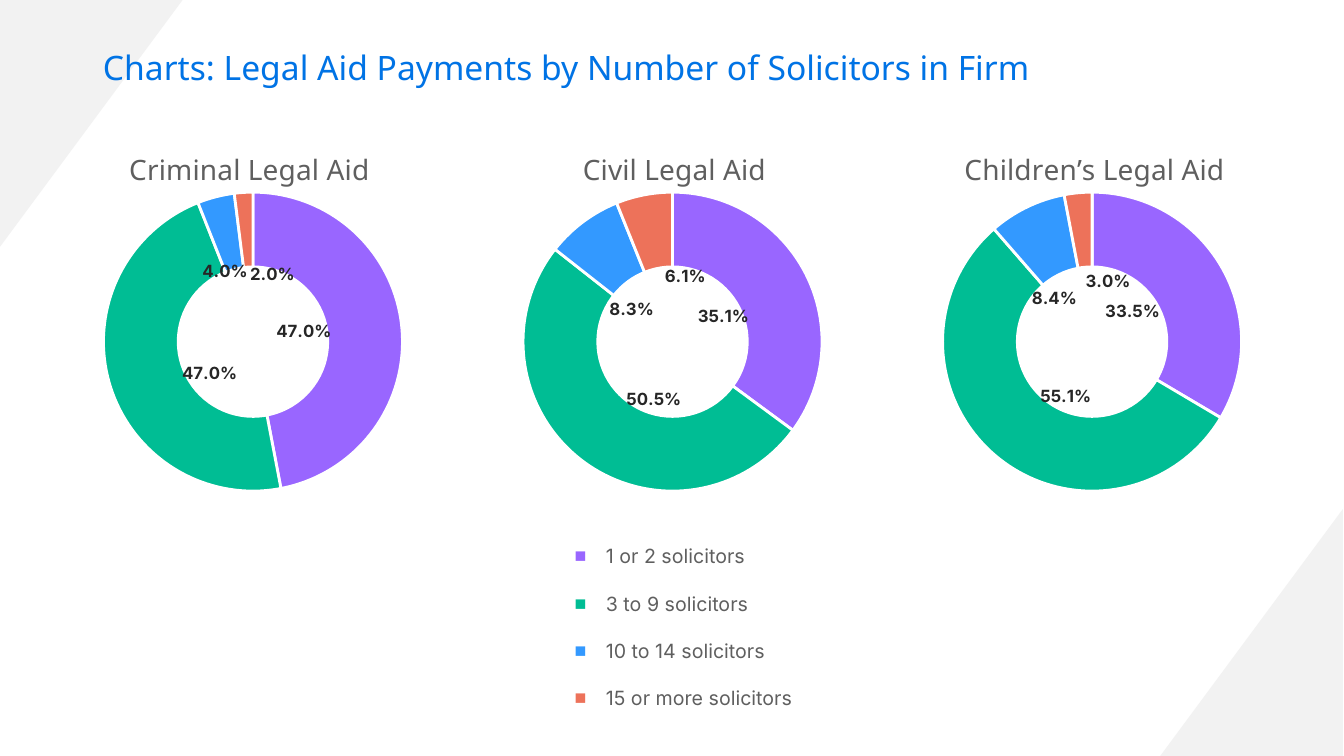
"""Build a slide with three doughnut charts of legal aid payments and one shared key."""
from pptx import Presentation
from pptx.chart.data import CategoryChartData
from pptx.dml.color import RGBColor
from pptx.enum.chart import XL_CHART_TYPE
from pptx.enum.shapes import MSO_SHAPE
from pptx.enum.text import MSO_ANCHOR, MSO_AUTO_SIZE, PP_ALIGN
from pptx.oxml import parse_xml
from pptx.oxml.ns import nsdecls, qn
from pptx.util import Cm, Pt

RING = XL_CHART_TYPE.DOUGHNUT
WEDGE = MSO_SHAPE.RIGHT_TRIANGLE
LEFT = PP_ALIGN.LEFT
TOP, MIDDLE = MSO_ANCHOR.TOP, MSO_ANCHOR.MIDDLE
FIXED = MSO_AUTO_SIZE.NONE

HEAD = {"name": "Noto Sans", "size": Pt(24), "bold": False, "ink": "0073E5"}
NAME = {"name": "Noto Sans", "size": Pt(20), "bold": False, "ink": "5F5F5F"}
SHARE = {"name": "Inter", "size": Pt(12), "bold": True, "ink": "262626"}
ENTRY = {"name": "Inter", "size": Pt(14), "bold": False, "ink": "5F5F5F"}
BASE = {"name": "Inter", "size": Pt(10), "ink": "000000"}
PARTS = [
    ("1 or 2 solicitors", "9966FF"),
    ("3 to 9 solicitors", "00BD94"),
    ("10 to 14 solicitors", "3399FF"),
    ("15 or more solicitors", "ED725A"),
]
RINGS = [
    ("Criminal Legal Aid", 0.16, (47, 47, 4, 2),
     [(-0.16, 0), (0.17, 0), (0, 0.06), (0.07, 0.07)]),
    ("Civil Legal Aid", 0.25, (35.1, 50.5, 8.3, 6.1),
     [(-0.13, 0.04), (0.13, -0.05), (0.07, 0.09), (0.09, 0.07)]),
    ("Children’s Legal Aid", 0.15, (33.5, 55.1, 8.4, 3),
     [(-0.15, 0.04), (0.12, -0.05), (0.03, 0.09), (0.07, 0.08)]),
]


def hue(code):
    """Turn a hex string into a colour."""
    return RGBColor.from_string(code)


def dress(font, form):
    """Set each format value on a font."""
    for key, value in form.items():
        if key == "ink":
            font.color.rgb = hue(value)
        else:
            setattr(font, key, value)


deck = Presentation()
deck.slide_width, deck.slide_height = Cm(33.86), Cm(19.05)
slide = deck.slides.add_slide(deck.slide_layouts[1])
title, key = slide.placeholders

for left, top, turn in [(28.42, 13.64, 270), (-0.81, 0.81, 90)]:
    wedge = slide.shapes.add_shape(WEDGE, Cm(left), Cm(top), Cm(6.22), Cm(4.6))
    wedge.rotation = turn
    wedge.shadow.inherit = False
    wedge.fill.solid()
    wedge.fill.fore_color.rgb = hue("F2F2F2")
    wedge.line.fill.background()
    slide.slide_layout.shapes.element.append(wedge.element)

for box, place, hold in [
    (title, (2.34, 1.02, 29.44, 1.47), MIDDLE),
    (key, (14.22, 13.59, 7.11, 4.45), TOP),
]:
    box.left, box.top, box.width, box.height = map(Cm, place)
    box.text_frame.vertical_anchor = hold
    box.text_frame.auto_size = FIXED

title.text_frame.text = "Charts: Legal Aid Payments by Number of Solicitors in Firm"
line = title.text_frame.paragraphs[0]
line.alignment, line.line_spacing = LEFT, 0.9
dress(line.runs[0].font, HEAD)

key.text_frame.text = "\n".join(label for label, tint in PARTS)
for row, (line, (label, tint)) in enumerate(zip(key.text_frame.paragraphs, PARTS)):
    line.alignment = LEFT
    line.space_before = Pt(17 if row else 0)
    props = line._p.get_or_add_pPr()
    props.set("marL", str(Cm(0.79)))
    props.set("indent", str(Cm(-0.79)))
    for mark in [
        f'<a:buClr {nsdecls("a")}><a:srgbClr val="{tint}"/></a:buClr>',
        f'<a:buChar {nsdecls("a")} char="■"/>',
    ]:
        props.append(parse_xml(mark))
    dress(line.runs[0].font, ENTRY)

for col, (name, inset, shares, nudges) in enumerate(RINGS):
    data = CategoryChartData()
    data.categories = ["1", "2", "3", "4"]
    data.add_series("Series 1", shares)
    chart = slide.shapes.add_chart(
        RING, Cm(1.6 + 10.57 * col), Cm(2.92), Cm(9.55), Cm(16.03), data
    ).chart
    dress(chart.font, BASE)
    chart.has_legend = False
    chart.has_title = True
    chart.chart_title.text_frame.text = name
    dress(chart.chart_title.text_frame.paragraphs[0].runs[0].font, NAME)

    plot = chart.plots[0]
    plot.vary_by_categories = True
    plot._element.find(qn("c:holeSize")).set("val", "70")
    series = plot.series[0]
    labels = series.data_labels
    for field, value in {
        "show_percentage": True,
        "show_value": False,
        "number_format": "0.0%",
        "number_format_is_linked": False,
    }.items():
        setattr(labels, field, value)
    dress(labels.font, SHARE)
    for lead in labels._element.findall(qn("c:showLeaderLines")):
        lead.set("val", "0")

    area = chart._chartSpace.chart.plotArea
    spots = [
        (area, 0, {"layoutTarget": "inner", "xMode": "edge", "yMode": "edge",
                   "x": 0.1, "y": 0.12, "w": 0.8, "h": 0.47}),
        (chart.chart_title._element, 1,
         {"xMode": "edge", "yMode": "edge", "x": inset, "y": 0.04}),
    ]
    for part, ((label, tint), (across, down)) in enumerate(zip(PARTS, nudges)):
        point = series.points[part]
        point.format.fill.solid()
        point.format.fill.fore_color.rgb = hue(tint)
        point.format.line.color.rgb = hue("FFFFFF")
        point.format.line.width = Pt(2)
        dress(point.data_label.font, SHARE)
        tag = labels._element.findall(qn("c:dLbl"))[part]
        tag.find(qn("c:showVal")).set("val", "0")
        tag.find(qn("c:showPercent")).set("val", "1")
        tag.insert(1, parse_xml(
            f'<c:numFmt {nsdecls("c")} formatCode="0.0%" sourceLinked="0"/>'))
        spots.append((tag, 1, {"x": across, "y": down}))

    for owner, slot, fields in spots:
        for old in owner.findall(qn("c:layout")):
            owner.remove(old)
        inner = "".join(f'<c:{k} val="{v}"/>' for k, v in fields.items())
        owner.insert(slot, parse_xml(
            f'<c:layout {nsdecls("c")}><c:manualLayout>{inner}'
            "</c:manualLayout></c:layout>"))

deck.save("out.pptx")
